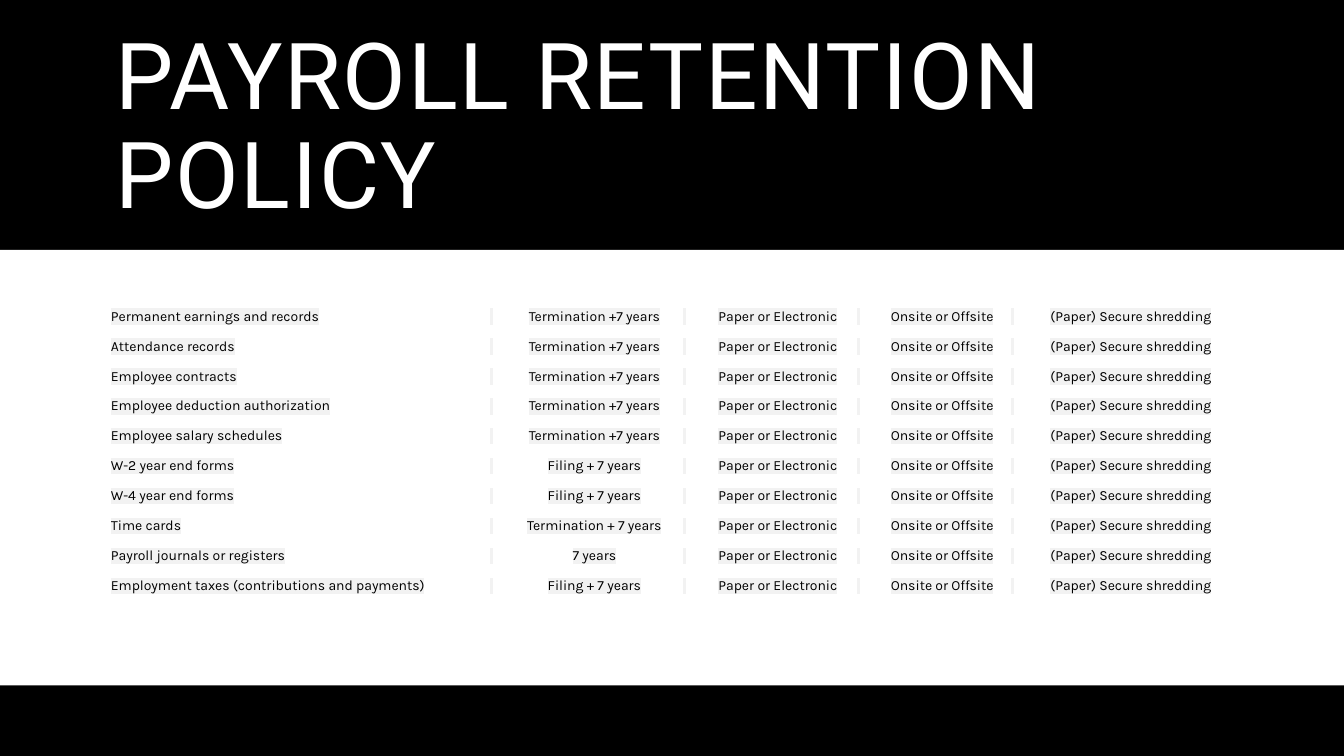
from dataclasses import dataclass

from lxml import etree
from pptx import Presentation
from pptx import util as u
from pptx.dml.color import RGBColor
from pptx.enum import shapes, text
from pptx.oxml.ns import qn

PX = 9144  # EMU per px, 100 px to the inch
BLACK, WHITE, GREY = "000000", "FFFFFF", "F2F2F2"


@dataclass
class Band:
    top: int
    height: int
    color: str


@dataclass
class Record:
    name: str
    retention: str


BANDS = [Band(0, 750, BLACK), Band(248, 432, WHITE)]
RECORDS = [
    Record("Permanent earnings and records", "Termination +7 years"),
    Record("Attendance records", "Termination +7 years"),
    Record("Employee contracts", "Termination +7 years"),
    Record("Employee deduction authorization", "Termination +7 years"),
    Record("Employee salary schedules", "Termination +7 years"),
    Record("W-2 year end forms", "Filing + 7 years"),
    Record("W-4 year end forms", "Filing + 7 years"),
    Record("Time cards", "Termination + 7 years"),
    Record("Payroll journals or registers", "7 years"),
    Record("Employment taxes (contributions and payments)", "Filing + 7 years"),
]
HANDLING = ["Paper or Electronic", "Onsite or Offsite", "(Paper) Secure shredding"]
GAP = " "  # highlighted mark between the columns
GAP_WIDTH = 18
COLUMN_WIDTHS = [376, 173, 155, 135, 203]


def px(length: int) -> u.Emu:
    return u.Emu(length * PX)


def rgb(color: str) -> RGBColor:
    return RGBColor.from_string(color)


def write(frame, words: str, *, font: str, size: int, color: str, align=text.PP_ALIGN.LEFT,
          line_spacing: float = 1.0, tracking: int = 0, highlight: str = "") -> None:
    paragraph = frame.paragraphs[0]
    paragraph.alignment = align
    paragraph.line_spacing = line_spacing
    run = paragraph.add_run()
    run.text = words
    run.font.size = u.Pt(size)
    run.font.bold = False
    run.font.color.rgb = rgb(color)
    run.font.name = font
    properties = run.font._element
    if tracking:
        properties.set("spc", str(tracking))
    if highlight:
        mark = etree.Element(qn("a:highlight"))
        etree.SubElement(mark, qn("a:srgbClr")).set("val", highlight)
        properties.find(qn("a:solidFill")).addnext(mark)


def draw_band(slide, band: Band) -> None:
    bar = slide.shapes.add_shape(shapes.MSO_SHAPE.RECTANGLE, 0, px(band.top), px(1333), px(band.height))
    bar.shadow.inherit = False
    bar.fill.solid()
    bar.fill.fore_color.rgb = rgb(band.color)
    bar.line.fill.background()


def with_gaps(items: list, gap) -> list:
    return [entry for item in items for entry in (item, gap)][:-1]


def draw_title(slide) -> None:
    title = slide.shapes.title
    slide.shapes._spTree.append(title._element)  # in front of the bands
    title.left, title.top, title.width, title.height = px(105), px(35), px(1123), px(186)
    frame = title.text_frame
    frame.word_wrap = True
    frame.auto_size = text.MSO_AUTO_SIZE.NONE
    frame.vertical_anchor = text.MSO_ANCHOR.MIDDLE
    write(frame, "PAYROLL RETENTION POLICY", font="Roboto", size=66, color=WHITE,
          line_spacing=0.9, tracking=120)


def draw_policy(slide, records: list[Record]) -> None:
    widths = with_gaps(COLUMN_WIDTHS, GAP_WIDTH)
    policy = slide.shapes.add_table(len(records), len(widths), px(109), px(301),
                                    px(sum(widths)), px(297)).table
    policy.first_row = policy.horz_banding = False
    for column, width in zip(policy.columns, widths):
        column.width = px(width)
    for row, record in enumerate(records):
        for col, words in enumerate(with_gaps([record.name, record.retention, *HANDLING], GAP)):
            cell = policy.cell(row, col)
            cell.fill.background()
            cell.margin_left = cell.margin_right = px(1)
            cell.margin_top = cell.margin_bottom = px(5)
            centred = col > 0 and words != GAP
            write(cell.text_frame, words, font="Karla", size=10, color=BLACK, highlight=GREY,
                  align=text.PP_ALIGN.CENTER if centred else text.PP_ALIGN.LEFT)


def main() -> None:
    deck = Presentation()
    deck.slide_width, deck.slide_height = px(1333), px(750)
    slide = deck.slides.add_slide(deck.slide_layouts[5])

    # Black header and footer around the white middle
    for band in BANDS:
        draw_band(slide, band)

    # Title and retention table
    draw_title(slide)
    draw_policy(slide, RECORDS)
    deck.save("out.pptx")


if __name__ == "__main__":
    main()
